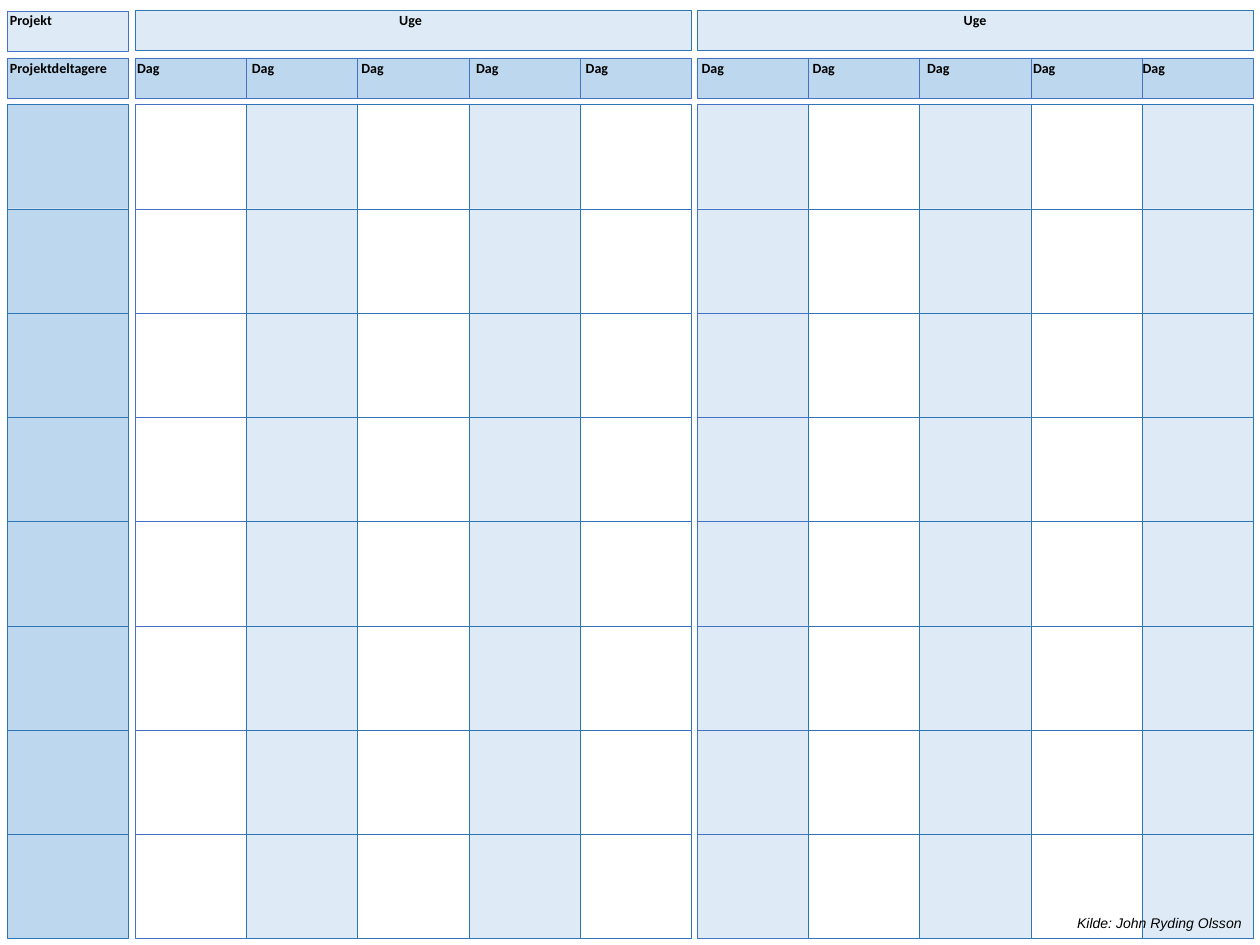
from dataclasses import dataclass

from lxml import etree
from pptx import Presentation
from pptx import util as u
from pptx.dml.color import RGBColor
from pptx.enum import shapes, text
from pptx.oxml.ns import qn


@dataclass(frozen=True)
class Theme:
    white: str = "FFFFFF"
    pale: str = "DEEBF7"
    medium: str = "BDD7EE"
    blue_line: str = "4472C4"
    teal_line: str = "2E75B6"
    ink: str = "000000"
    label_font: str = "Calibri"
    source_font: str = "Arial"
    size: float = 8
    line_width: float = 0.25


class Planner:
    """Holds the theme and the current slide."""

    def __init__(self, theme, slide):
        self.theme = theme
        self.slide = slide

    def cell(self, parent, left, top, width, height, fill, line):
        shape = parent.add_shape(
            shapes.MSO_SHAPE.RECTANGLE,
            u.Inches(left), u.Inches(top), u.Inches(width), u.Inches(height))
        shape.shadow.inherit = False
        shape.fill.solid()
        shape.fill.fore_color.rgb = RGBColor.from_string(fill)
        shape.line.color.rgb = RGBColor.from_string(line)
        shape.line.width = u.Pt(self.theme.line_width)

    def body(self, parent, left, top, width, fill, line):
        """Stack one cell for each participant."""
        for row in range(ROWS):
            self.cell(parent, left, top + row * ROW_HEIGHT, width, ROW_HEIGHT, fill, line)

    def label(self, left, top, width, words, font, bold=False, italic=False, tabs=()):
        """Write one line, its words set at the given tab positions on the slide."""
        box = self.slide.shapes.add_textbox(
            u.Inches(left), u.Inches(top), u.Inches(width), u.Inches(0.24))
        frame = box.text_frame
        frame.word_wrap = True
        paragraph = frame.paragraphs[0]
        paragraph.alignment = text.PP_ALIGN.LEFT
        if tabs:
            properties = paragraph._p.get_or_add_pPr()
            tab_list = etree.SubElement(properties, qn("a:tabLst"))
            for tab in tabs:
                position = u.Inches(tab - left) - frame.margin_left
                etree.SubElement(tab_list, qn("a:tab"), pos=str(position), algn="l")
        run = paragraph.add_run()
        run.text = "\t".join(words)
        run.font.name = font
        run.font.size = u.Pt(self.theme.size)
        run.font.bold = bold
        run.font.italic = italic
        run.font.color.rgb = RGBColor.from_string(self.theme.ink)


# Grid, in inches
ROWS, DAYS = 8, 5
WEEK_WIDTH = 4.42
DAY_WIDTH = WEEK_WIDTH / DAYS
ROW_HEIGHT = 6.62 / ROWS
WEEK_TOP, DAY_TOP, BODY_TOP = 0.08, 0.46, 0.83
HEADER_HEIGHT = 0.32
PEOPLE_LEFT, PEOPLE_WIDTH = 0.06, 0.96
WEEK_LEFTS = (1.07, 5.53)
LABEL_LEFT = -0.02
WEEK_TABS = (3.17, 7.65)
DAY_TABS = (1.09, 2.0, 2.87, 3.78, 4.65, 5.57, 6.45, 7.36, 8.2, 9.07)


def main():
    presentation = Presentation()
    presentation.slide_width = u.Inches(10)
    presentation.slide_height = u.Inches(7.5)
    slide = presentation.slides.add_slide(presentation.slide_layouts[6])
    theme = Theme()
    planner = Planner(theme, slide)

    # Project and participants column
    people = slide.shapes.add_group_shape().shapes
    planner.cell(people, PEOPLE_LEFT, DAY_TOP, PEOPLE_WIDTH, HEADER_HEIGHT,
                 theme.medium, theme.blue_line)
    planner.body(people, PEOPLE_LEFT, BODY_TOP, PEOPLE_WIDTH, theme.medium, theme.teal_line)
    planner.cell(people, PEOPLE_LEFT, 0.09, PEOPLE_WIDTH, HEADER_HEIGHT,
                 theme.pale, theme.blue_line)

    # Two weeks of five days, shaded in alternate columns across both
    for week, week_left in enumerate(WEEK_LEFTS):
        for day in range(DAYS):
            left = week_left + day * DAY_WIDTH
            fill = theme.pale if (week * DAYS + day) % 2 else theme.white
            line = theme.teal_line if day else theme.blue_line
            planner.cell(slide.shapes, left, DAY_TOP, DAY_WIDTH, HEADER_HEIGHT,
                         theme.medium, theme.blue_line)
            planner.body(slide.shapes, left, BODY_TOP, DAY_WIDTH, fill, line)
        planner.cell(slide.shapes, week_left, WEEK_TOP, WEEK_WIDTH, HEADER_HEIGHT,
                     theme.pale, theme.teal_line)

    # Header labels and source
    planner.label(LABEL_LEFT, 0.04, 7.98, ["Projekt"] + ["Uge"] * len(WEEK_TABS),
                  theme.label_font, bold=True, tabs=WEEK_TABS)
    planner.label(LABEL_LEFT, 0.42, 9.49, ["Projektdeltagere"] + ["Dag"] * len(DAY_TABS),
                  theme.label_font, bold=True, tabs=DAY_TABS)
    planner.label(8.45, 7.21, 1.53, ["Kilde: John Ryding Olsson"],
                  theme.source_font, italic=True)

    presentation.save("out.pptx")


if __name__ == "__main__":
    main()
